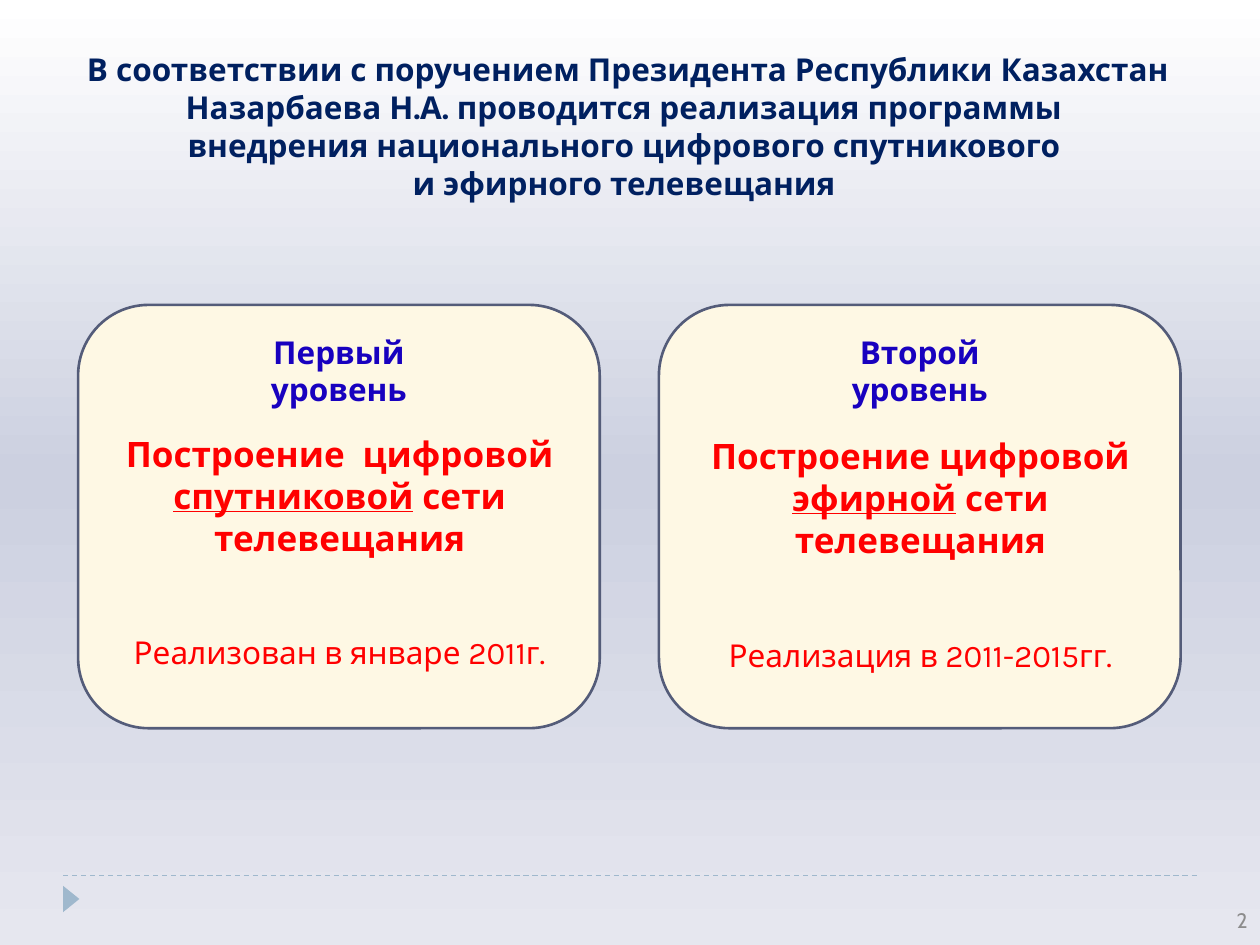
"""Build the slide on the two levels of the digital broadcasting programme."""
import pptx
import pptx.dml.color
import pptx.enum.dml
import pptx.enum.shapes
import pptx.enum.text
import pptx.oxml
import pptx.oxml.ns
import pptx.util

Inches = pptx.util.Inches
Pt = pptx.util.Pt
SHAPES = pptx.enum.shapes.MSO_SHAPE
ALIGN = pptx.enum.text.PP_ALIGN
ANCHOR = pptx.enum.text.MSO_ANCHOR

WIDTH, HEIGHT = 10, 7.5
CARD_WIDTH, CARD_HEIGHT = 4.14, 3.36
CARD_LEFT, CARD_TOP, CARD_STEP = 0.62, 2.42, 4.61
COLORS = {
    "title": "002060", "level": "1801BF", "body": "FF0000", "number": "8C8C8C",
    "card": "FEF8E4", "card_line": "545C79", "accent": "9FB8CD",
}
BACKGROUND_STOPS = [(0, "FFFFFF"), (50, "CCD0E0"), (100, "E6E7EF")]
TITLE_LINES = [
    "В соответствии с поручением Президента Республики Казахстан "
    "Назарбаева Н.А. проводится реализация программы ",
    "внедрения национального цифрового спутникового ",
    "и эфирного телевещания ",
]
CARDS = [
    ("Первый уровень", ("Построение  цифровой ", "спутниковой", " сети телевещания"),
     "Реализован в январе 2011г.", 3.38),
    ("Второй уровень", ("Построение цифровой ", "эфирной", " сети телевещания"),
     "Реализация в 2011-2015гг.", 3.4),
]


def rgb(name):
    """Return the named colour."""
    return pptx.dml.color.RGBColor.from_string(COLORS[name])


def style(para, color, size, font="Karla", bold=False, align=ALIGN.CENTER):
    """Set the font and alignment of a paragraph."""
    para.alignment = align
    para.font.name = font
    para.font.size = Pt(size)
    para.font.bold = bold
    para.font.color.rgb = rgb(color)


def paint_background(slide):
    """Fill the background with a vertical gradient of three stops."""
    slide.background.fill.gradient()
    gradient = slide.element.find(".//" + pptx.oxml.ns.qn("a:gradFill"))
    stops = "".join(
        f'<a:gs pos="{share * 1000}"><a:srgbClr val="{color}"/></a:gs>'
        for share, color in BACKGROUND_STOPS)
    new = pptx.oxml.parse_xml(
        f'<a:gradFill {pptx.oxml.ns.nsdecls("a")} rotWithShape="1">'
        f'<a:gsLst>{stops}</a:gsLst><a:lin ang="5400000" scaled="0"/></a:gradFill>')
    gradient.getparent().replace(gradient, new)


def add_title(slide):
    """Place the title and raise its text by one line."""
    title = slide.shapes.title
    title.left, title.top = Inches(0.2), Inches(0.44)
    title.width, title.height = Inches(9.57), Inches(1.42)
    frame = title.text_frame
    frame.text = "\n".join(TITLE_LINES)
    frame.auto_size = pptx.enum.text.MSO_AUTO_SIZE.NONE
    frame.vertical_anchor = ANCHOR.MIDDLE
    frame.margin_bottom = Inches(0.35)
    for para in frame.paragraphs:
        style(para, "title", 18, bold=True)


def add_shape(slide, kind, left, top, width, height, fill):
    """Add a filled preset shape without a shadow."""
    shape = slide.shapes.add_shape(
        kind, Inches(left), Inches(top), Inches(width), Inches(height))
    shape.shadow.inherit = False
    shape.fill.solid()
    shape.fill.fore_color.rgb = rgb(fill)
    return shape


def add_text(slide, left, top, width, height):
    """Add a wrapping text box and return its frame."""
    box = slide.shapes.add_textbox(
        Inches(left), Inches(top), Inches(width), Inches(height))
    box.text_frame.word_wrap = True
    return box.text_frame


def add_card(slide, left, level, goal, status, body_top):
    """Add a rounded card with its level, goal and status."""
    card = add_shape(slide, SHAPES.ROUNDED_RECTANGLE, left, CARD_TOP,
                     CARD_WIDTH, CARD_HEIGHT, "card")
    card.line.color.rgb = rgb("card_line")
    card.line.width = Pt(1.5)

    body = add_text(slide, left + 0.2, body_top, 3.75, 2.02)
    goal_para = body.paragraphs[0]
    style(goal_para, "body", 20, bold=True)
    for index, words in enumerate(goal):
        span = goal_para.add_run()
        span.text = words
        if index == 1:
            span.font.underline = True
    status_para = body.add_paragraph()
    status_para.text = status
    status_para.space_before = Pt(43)
    style(status_para, "body", 18)

    heading = add_text(slide, left + (CARD_WIDTH - 2.13) / 2, 2.59, 2.13, 0.4)
    heading.text = level
    style(heading.paragraphs[0], "level", 18, "Cabin", bold=True)


def add_footer(slide):
    """Add the dashed rule, the marker and the page number."""
    rule = slide.shapes.add_connector(
        pptx.enum.shapes.MSO_CONNECTOR.STRAIGHT,
        Inches(0.5), Inches(6.95), Inches(WIDTH - 0.5), Inches(6.95))
    rule.line.color.rgb = rgb("accent")
    rule.line.width = Pt(0.75)
    rule.line.dash_style = pptx.enum.dml.MSO_LINE.DASH
    rule.element.spPr.append(
        pptx.oxml.parse_xml(f'<a:effectLst {pptx.oxml.ns.nsdecls("a")}/>'))

    marker = add_shape(slide, SHAPES.ISOSCELES_TRIANGLE, 0.46, 7.07, 0.21, 0.13, "accent")
    marker.rotation = 90
    marker.line.fill.background()

    number = add_text(slide, 9.53, 7.1, 0.47, 0.4)
    number.vertical_anchor = ANCHOR.MIDDLE
    number.text = "2"
    style(number.paragraphs[0], "number", 12, "Cabin", align=ALIGN.RIGHT)


def main():
    """Build and save the deck."""
    deck = pptx.Presentation()
    deck.slide_width, deck.slide_height = Inches(WIDTH), Inches(HEIGHT)
    page = deck.slides.add_slide(deck.slide_layouts.get_by_name("Title Only"))
    paint_background(page)
    add_footer(page)
    add_title(page)
    for column, card in enumerate(CARDS):
        add_card(page, CARD_LEFT + column * CARD_STEP, *card)
    deck.save("out.pptx")


if __name__ == "__main__":
    main()
